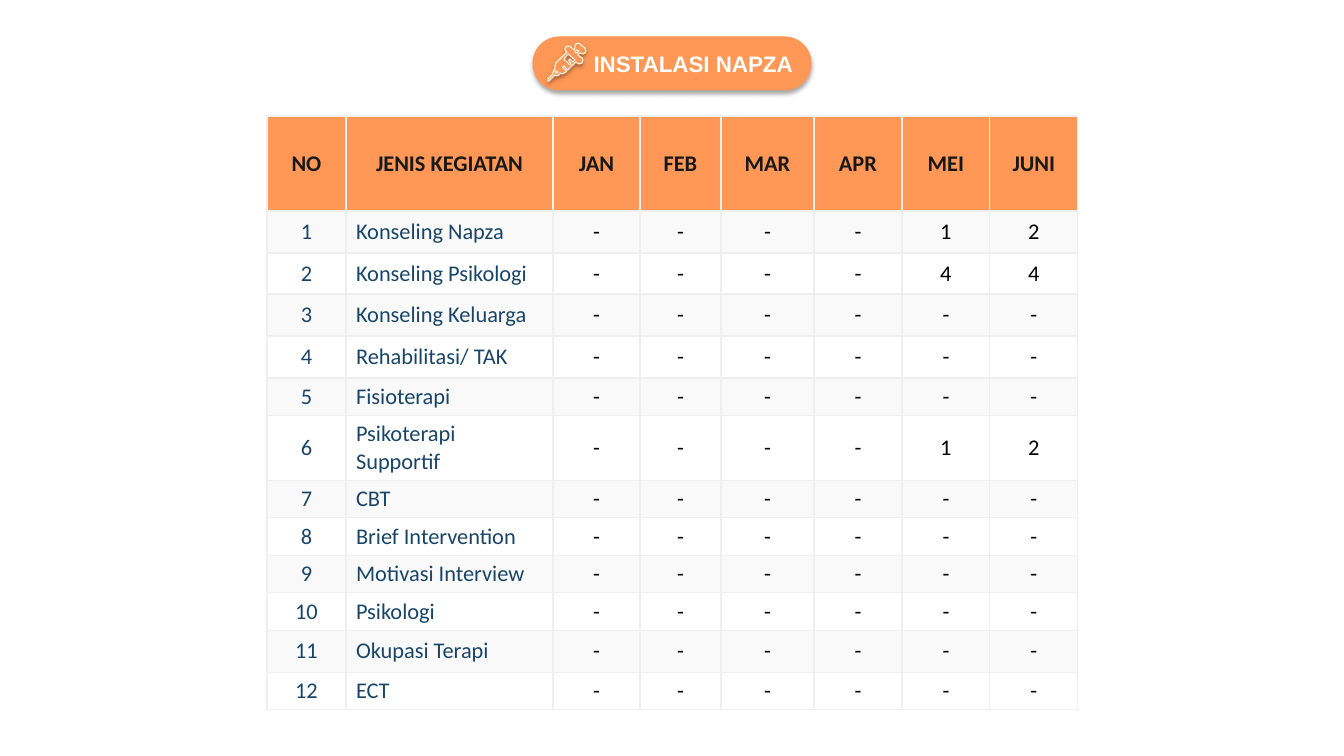
from dataclasses import dataclass

from lxml.etree import SubElement
from pptx import Presentation
from pptx.dml.color import RGBColor
from pptx.enum.shapes import MSO_SHAPE
from pptx.enum.text import MSO_ANCHOR, MSO_AUTO_SIZE, PP_ALIGN
from pptx.oxml.ns import qn
from pptx.util import Pt

EMU_PER_PX = 914400 / 100.8


def px(length):
    return round(length * EMU_PER_PX)


@dataclass(frozen=True)
class Theme:
    orange: str = "FF9856"
    cream: str = "FFFEEF"
    white: str = "FFFFFF"
    band: str = "F9F9F9"
    border: str = "EFEFEF"
    heading: str = "181818"
    navy: str = "1A4568"
    black: str = "000000"
    title_font: str = "Arial"
    table_font: str = "Calibri"
    text_size: int = 16
    outline: float = 0.75
    border_width: int = 1


class SlideBuilder:
    def __init__(self, slide, theme):
        self.slide = slide
        self.theme = theme

    def add_text(self, frame, text, font, color, bold, align, insets):
        frame.margin_left, frame.margin_top, frame.margin_right, frame.margin_bottom = map(px, insets)
        paragraph = frame.paragraphs[0]
        paragraph.alignment = align
        run = paragraph.add_run()
        run.text = text
        run.font.name = font
        run.font.size = Pt(self.theme.text_size)
        run.font.bold = bold
        run.font.color.rgb = RGBColor.from_string(color)

    def paint(self, shape, fill, line):
        shape.fill.solid()
        shape.fill.fore_color.rgb = RGBColor.from_string(fill)
        shape.line.color.rgb = RGBColor.from_string(line)
        shape.line.width = Pt(self.theme.outline)
        shape.shadow.inherit = False
        effects = shape._element.spPr.find(qn("a:effectLst"))
        shadow = SubElement(effects, qn("a:outerShdw"), blurRad=str(Pt(3.1)), dist=str(Pt(1.8)),
                            dir="5400000", algn="t", rotWithShape="0")
        tint = SubElement(shadow, qn("a:srgbClr"), val=self.theme.black)
        SubElement(tint, qn("a:alpha"), val="35000")

    def title_pill(self, text, left, top, width, height):
        box = [px(length) for length in (left, top, width, height)]
        pill = self.slide.shapes.add_shape(MSO_SHAPE.ROUNDED_RECTANGLE, *box)
        pill.adjustments[0] = 0.5
        self.paint(pill, self.theme.orange, self.theme.orange)
        title = self.slide.shapes.title
        title.left, title.top, title.width, title.height = box
        title._element.addprevious(pill._element)
        frame = title.text_frame
        frame.auto_size = MSO_AUTO_SIZE.NONE
        frame.word_wrap = True
        frame.vertical_anchor = MSO_ANCHOR.MIDDLE
        self.add_text(frame, text, self.theme.title_font, self.theme.white, True,
                      PP_ALIGN.RIGHT, (18, 5, 18, 5))

    def icon(self, contours, left, top):
        first, *others = contours
        builder = self.slide.shapes.build_freeform(*first[0], scale=EMU_PER_PX)
        builder.add_line_segments(first[1:], close=True)
        for contour in others:
            builder.move_to(*contour[0])
            builder.add_line_segments(contour[1:], close=True)
        self.paint(builder.convert_to_shape(px(left), px(top)), self.theme.orange, self.theme.cream)

    def border(self, cell):
        properties = cell._tc.get_or_add_tcPr()
        for index, side in enumerate(("lnL", "lnR", "lnT", "lnB")):
            line = SubElement(properties, qn(f"a:{side}"), w=str(Pt(self.theme.border_width)))
            fill = SubElement(line, qn("a:solidFill"))
            SubElement(fill, qn("a:srgbClr"), val=self.theme.border)
            properties.insert(index, line)

    def cell(self, cell, text, row, column):
        theme = self.theme
        if row == 0:
            fill, color, insets = theme.orange, theme.heading, (20, 8, 20, 8)
        else:
            fill = theme.band if row % 2 else theme.white
            color, insets = (theme.navy, (2, 2, 2, 0)) if column < 2 else (theme.black, (1, 1, 1, 0))
        align = PP_ALIGN.LEFT if row and column == 1 else PP_ALIGN.CENTER
        cell.fill.solid()
        cell.fill.fore_color.rgb = RGBColor.from_string(fill)
        cell.vertical_anchor = MSO_ANCHOR.MIDDLE
        self.border(cell)
        self.add_text(cell.text_frame, text, theme.table_font, color, row == 0, align, insets)

    def table(self, records, left, top, widths, heights):
        table = self.slide.shapes.add_table(len(heights), len(widths), px(left), px(top),
                                            px(sum(widths)), px(sum(heights))).table
        table.horz_banding = False
        for column, width in zip(table.columns, widths):
            column.width = px(width)
        for row, height in zip(table.rows, heights):
            row.height = px(height)
        for row, record in enumerate(records):
            for column, text in enumerate(record):
                self.cell(table.cell(row, column), text, row, column)


HEADINGS = ["NO", "JENIS KEGIATAN", "JAN", "FEB", "MAR", "APR", "MEI", "JUNI"]
ACTIVITIES = [
    "Konseling Napza", "Konseling Psikologi", "Konseling Keluarga", "Rehabilitasi/ TAK",
    "Fisioterapi", "Psikoterapi Supportif", "CBT", "Brief Intervention",
    "Motivasi Interview", "Psikologi", "Okupasi Terapi", "ECT",
]
MAY_JUNE = {
    "Konseling Napza": ["1", "2"],
    "Konseling Psikologi": ["4", "4"],
    "Psikoterapi Supportif": ["1", "2"],
}
COLUMN_WIDTHS = [79, 207, 87, 81, 93, 88, 88, 88]
ROW_HEIGHTS = [95, 42, 41, 42, 42, 29, 41, 29, 33, 29, 29, 42, 32]
SYRINGE = [
    [(30, 0), (28, 1), (27, 3), (27, 5), (26, 7), (23, 4), (20, 3), (18, 4), (17, 6), (18, 9),
     (19, 9), (8, 20), (7, 23), (7, 26), (6, 27), (5, 29), (5, 31), (0, 36), (0, 38), (1, 38),
     (7, 32), (8, 33), (11, 32), (12, 30), (14, 31), (18, 29), (19, 28), (15, 25), (15, 24),
     (16, 23), (17, 24), (20, 27), (28, 19), (29, 20), (31, 21), (34, 20), (35, 17), (34, 15),
     (30, 12), (32, 10), (35, 11), (37, 10), (38, 8), (37, 5), (32, 1)],
    [(29, 7), (31, 8), (29, 10), (27, 9)],
    [(20, 11), (27, 17), (25, 19), (23, 17), (22, 16), (21, 17), (21, 18), (23, 21), (22, 22),
     (16, 16)],
    [(8, 28), (10, 29), (9, 30), (8, 30), (7, 29)],
]


def main():
    presentation = Presentation()
    presentation.slide_width, presentation.slide_height = px(1344), px(756)
    slide = presentation.slides.add_slide(presentation.slide_layouts[5])
    builder = SlideBuilder(slide, Theme())
    records = [HEADINGS] + [
        [str(number), activity] + ["-"] * 4 + MAY_JUNE.get(activity, ["-", "-"])
        for number, activity in enumerate(ACTIVITIES, 1)
    ]
    builder.table(records, 267, 116, COLUMN_WIDTHS, ROW_HEIGHTS)
    builder.title_pill("INSTALASI NAPZA", 533, 37, 278, 53)
    builder.icon(SYRINGE, 548, 43)
    presentation.save("out.pptx")


if __name__ == "__main__":
    main()
